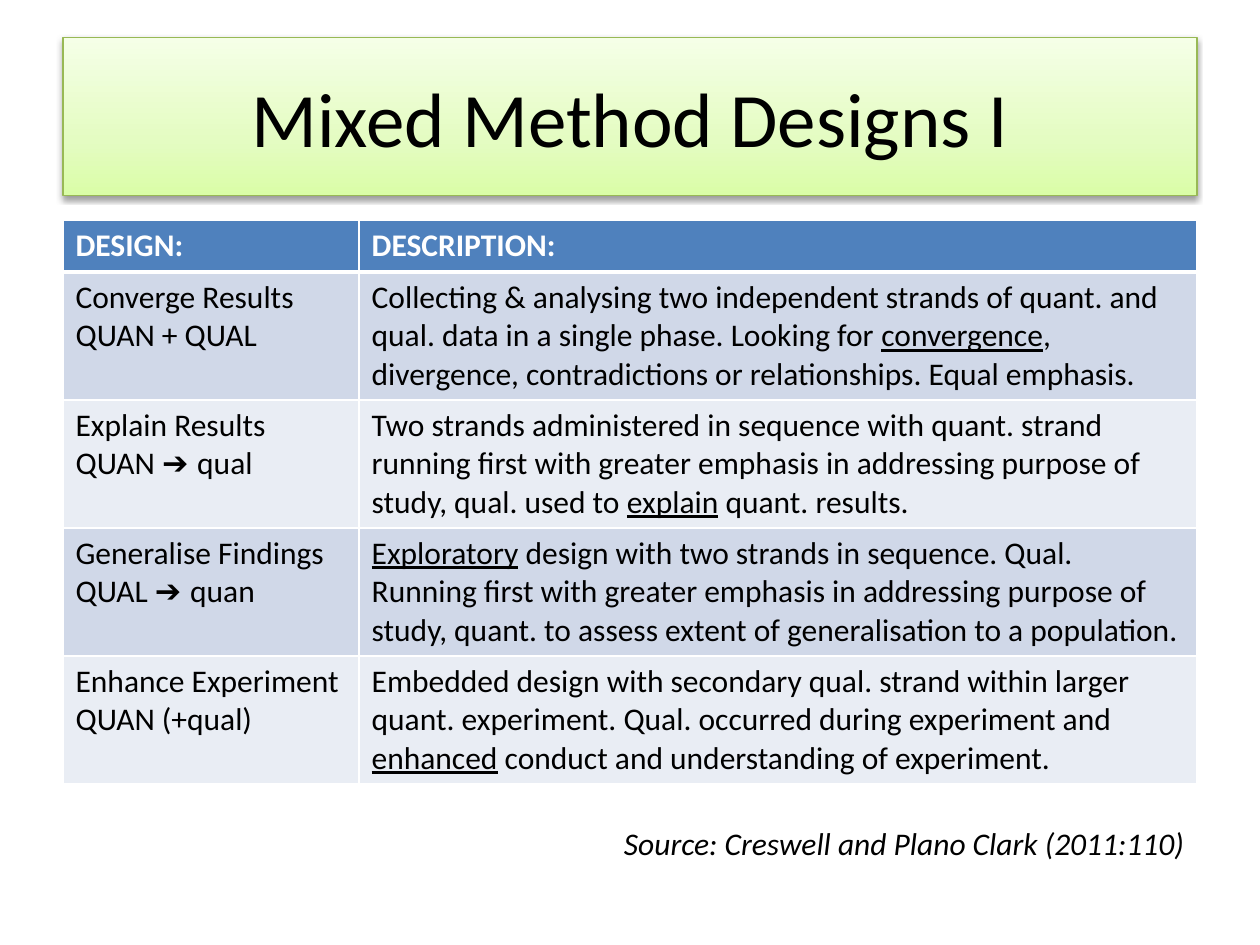
from copy import deepcopy

from pptx import Presentation
from pptx import util as u
from pptx.dml.color import RGBColor
from pptx.enum import shapes, text
from pptx.oxml import parse_xml
from pptx.oxml.ns import nsdecls, qn

COLORS = {
    "black": "000000",
    "white": "FFFFFF",
    "title_line": "98B955",
    "header": "4F81BD",
    "band_dark": "D0D8E8",
    "band_light": "E9EDF4",
}
TITLE_STOPS = [(0, "DAFDA7"), (0.35, "E4FCC2"), (1, "F5FFE7")]
BODY_FORMAT = {"name": "Calibri", "size": u.Pt(18), "bold": False}

# "|" separates runs; a run that starts with "_" is underlined.
DESIGNS = [
    (["Converge Results", "QUAN + QUAL"],
     "Collecting & analysing two independent strands of quant. and qual. data in a "
     "single phase. Looking for |_convergence|, divergence, contradictions or "
     "relationships. Equal emphasis."),
    (["Explain Results", "QUAN |➔ |qual"],
     "Two strands administered in sequence with quant. strand running first with "
     "greater emphasis in addressing purpose of study, qual. used to |_explain| "
     "quant. results."),
    (["Generalise Findings", "QUAL |➔ |quan"],
     "_Exploratory| design with two strands in sequence. Qual. Running first with "
     "greater emphasis in addressing purpose of study, quant. to assess extent of "
     "generalisation to a population."),
    (["Enhance Experiment", "QUAN (+qual)"],
     "Embedded design with secondary qual. strand within larger quant. experiment. "
     "Qual. occurred during experiment and |_enhanced| conduct and understanding of "
     "experiment."),
]


def rgb(name):
    return RGBColor.from_string(COLORS[name])


def add_run(paragraph, words, color="black", **changes):
    run = paragraph.add_run()
    run.text = words
    for attribute, value in {**BODY_FORMAT, **changes}.items():
        setattr(run.font, attribute, value)
    run.font.color.rgb = rgb(color)


def write_lines(frame, lines, **changes):
    """Write one paragraph per line, turning the run marks into formats."""
    for index, line in enumerate(lines):
        paragraph = frame.paragraphs[0] if index == 0 else frame.add_paragraph()
        for piece in line.split("|"):
            marks = {}
            if piece.startswith("_"):
                marks["underline"] = True
            elif piece.startswith("➔"):
                marks["name"] = "Arial"
            add_run(paragraph, piece.removeprefix("_"), **{**changes, **marks})


def fill_gradient(shape):
    shape.fill.gradient()
    shape.fill.gradient_angle = 90
    stop_list = shape.fill.gradient_stops
    first = next(shape.element.iter(qn("a:gs")))
    first.addnext(deepcopy(first))
    stop_list = shape.fill.gradient_stops
    for stop, (position, color) in zip(stop_list, TITLE_STOPS):
        stop.position = position
        stop.color.rgb = RGBColor.from_string(color)


def add_soft_shadow(shape):
    shape.shadow.inherit = False
    effects = shape.element.spPr.find(qn("a:effectLst"))
    effects.append(parse_xml(
        f'<a:outerShdw {nsdecls("a")} blurRad="{u.Pt(3.1)}" dist="{u.Pt(1.6)}" '
        f'dir="5400000" rotWithShape="0"><a:srgbClr val="{COLORS["black"]}">'
        '<a:alpha val="38000"/></a:srgbClr></a:outerShdw>'))


def add_title(slide, left, top, width, height):
    shape = slide.shapes.add_shape(
        shapes.MSO_SHAPE.RECTANGLE, left, top, width, height)
    fill_gradient(shape)
    shape.line.color.rgb = rgb("title_line")
    shape.line.width = u.Pt(0.75)
    add_soft_shadow(shape)
    frame = shape.text_frame
    frame.word_wrap = True
    frame.vertical_anchor = text.MSO_ANCHOR.MIDDLE
    frame.paragraphs[0].alignment = text.PP_ALIGN.CENTER
    write_lines(frame, ["Mixed Method Designs I"], size=u.Pt(44))


def style_cell(cell, fill, edges):
    """Fill the cell and give it white borders, with edges as widths in points."""
    cell.fill.solid()
    cell.fill.fore_color.rgb = rgb(fill)
    properties = cell._tc.get_or_add_tcPr()
    for index, (side, width) in enumerate(edges.items()):
        properties.insert(index, parse_xml(
            f'<a:ln{side} {nsdecls("a")} w="{u.Pt(width)}"><a:solidFill>'
            f'<a:srgbClr val="{COLORS["white"]}"/></a:solidFill></a:ln{side}>'))


def add_design_table(slide, left, top, width, height):
    header_height = u.Inches(0.41)
    rows = [(["DESIGN:"], "DESCRIPTION:"), *DESIGNS]
    table = slide.shapes.add_table(len(rows), 2, left, top, width, height).table
    table.horz_banding = False
    table.columns[0].width = u.Inches(2.35)
    table.columns[1].width = width - u.Inches(2.35)
    for index, (design, description) in enumerate(rows):
        is_header = index == 0
        table.rows[index].height = (
            header_height if is_header else (height - header_height) // len(DESIGNS))
        if is_header:
            fill, changes = "header", {"color": "white", "bold": True}
        else:
            fill, changes = "band_dark" if index % 2 else "band_light", {}
        edges = {"L": 1, "R": 1, "T": 3 if index == 1 else 1, "B": 3 if is_header else 1}
        for cell, lines in zip(table.rows[index].cells, (design, [description])):
            style_cell(cell, fill, edges)
            write_lines(cell.text_frame, lines, **changes)


def add_source_note(slide, left, top, width, height):
    frame = slide.shapes.add_textbox(left, top, width, height).text_frame
    frame.word_wrap = True
    frame.auto_size = text.MSO_AUTO_SIZE.SHAPE_TO_FIT_TEXT
    frame.paragraphs[0].alignment = text.PP_ALIGN.RIGHT
    write_lines(frame, ["Source: Creswell and Plano Clark (2011:110)"], italic=True)


def main():
    presentation = Presentation()
    presentation.slide_width = u.Inches(10)
    presentation.slide_height = u.Inches(7.5)
    slide = presentation.slides.add_slide(presentation.slide_layouts[6])
    left, width = u.Inches(0.5), u.Inches(9)
    add_title(slide, left, u.Inches(0.3), width, u.Inches(1.25))
    add_design_table(slide, left, u.Inches(1.75), width, u.Inches(4.41))
    add_source_note(slide, u.Inches(4.51), u.Inches(6.49), u.Inches(4.99), u.Inches(0.4))
    presentation.save("out.pptx")


if __name__ == "__main__":
    main()
